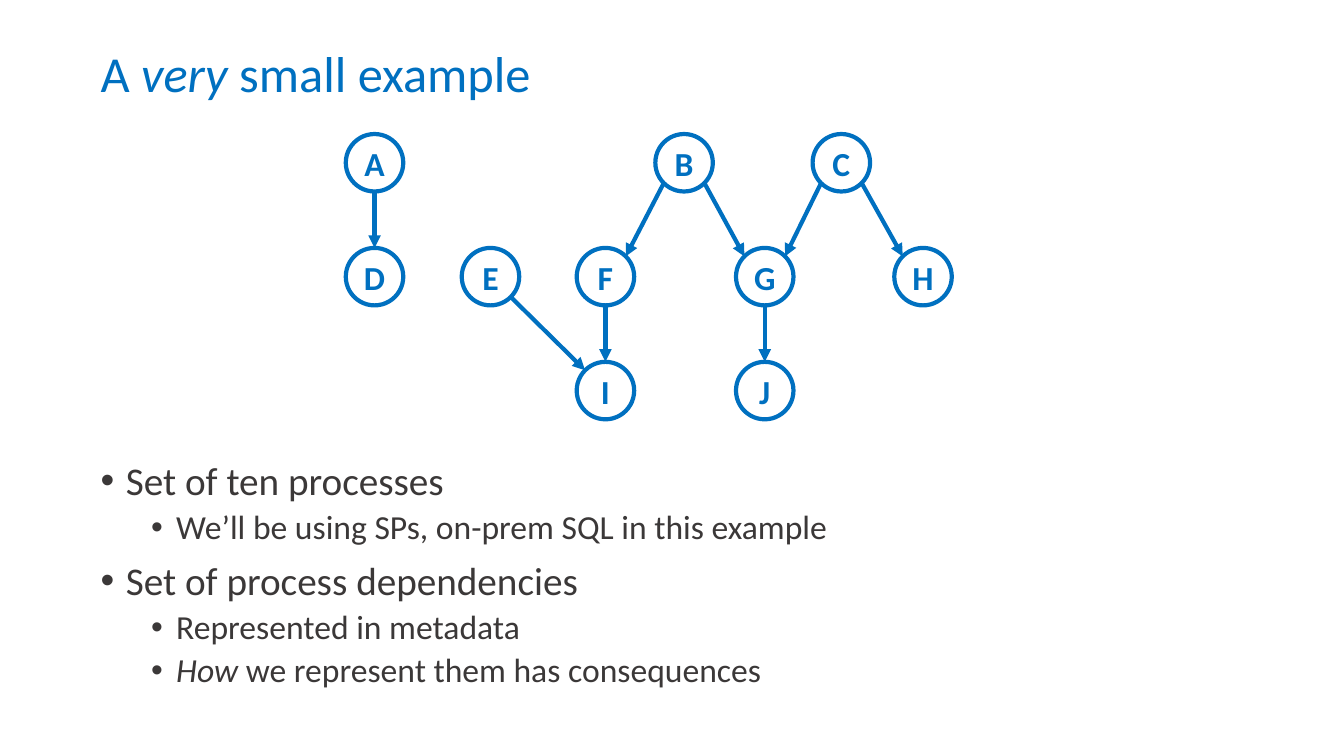
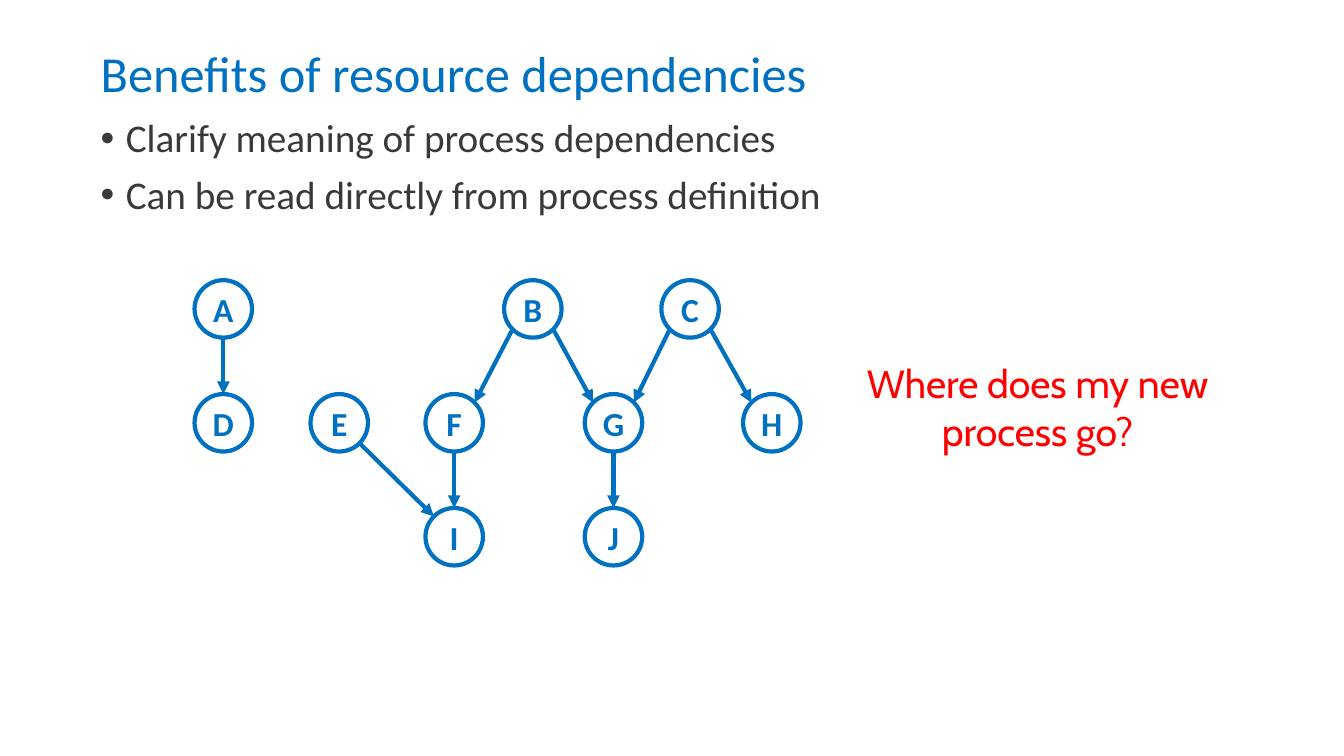
from dataclasses import dataclass

from lxml import etree
from pptx import Presentation
from pptx.dml.color import RGBColor
from pptx.enum.shapes import MSO_CONNECTOR, MSO_SHAPE
from pptx.enum.text import MSO_ANCHOR, PP_ALIGN
from pptx.oxml.ns import qn
from pptx.util import Inches, Pt

STRAIGHT = MSO_CONNECTOR.STRAIGHT
OVAL = MSO_SHAPE.OVAL
MIDDLE = MSO_ANCHOR.MIDDLE
CENTER = PP_ALIGN.CENTER

BLUE = "0070C0"
DARK = "3B3838"
RED = "FF0000"
BODY_FONT = "Calibri"
NOTE_FONT = "Cabin"

MARGIN = 0.9
NODE_SIZE = 0.57
ROW_PITCH = 1.13
DIAGONAL = 0.5 ** 0.5
LINE_WIDTH = 3


@dataclass(frozen=True)
class Node:
    label: str
    x: float
    row: int


@dataclass(frozen=True)
class Bullet:
    text: str
    level: int = 0


@dataclass(frozen=True)
class Level:
    size: int
    indent: float
    space_before: int


LEVELS = (Level(28, 0.25, 10), Level(24, 0.75, 5))

NODES = (
    Node("A", 0, 0), Node("B", 3.07, 0), Node("C", 4.63, 0),
    Node("D", 0, 1), Node("E", 1.15, 1), Node("F", 2.29, 1),
    Node("G", 3.87, 1), Node("H", 5.44, 1),
    Node("I", 2.29, 2), Node("J", 3.87, 2),
)
DEPENDENCIES = ("AD", "BF", "BG", "CG", "CH", "EI", "FI", "GJ")


def rgb(value: str) -> RGBColor:
    return RGBColor.from_string(value)


def style(r, size: float, color: str, font: str = BODY_FONT, bold: bool = False) -> None:
    r.font.size = Pt(size)
    r.font.name = font
    r.font.bold = bold
    r.font.color.rgb = rgb(color)


def write(p, text: str, size: float, color: str) -> None:
    for i, part in enumerate(text.split("*")):
        if part:
            r = p.add_run()
            r.text = part
            style(r, size, color)
            r.font.italic = i % 2 == 1


def add_box(s, x: float, y: float, w: float, h: float):
    sp = s.shapes.add_textbox(Inches(x), Inches(y), Inches(w), Inches(h))
    sp.text_frame.word_wrap = True
    return sp.text_frame


def add_title(s, text: str) -> None:
    tf = add_box(s, MARGIN, 0.35, 11.56, 0.62)
    tf.margin_top = Inches(0.14)
    tf.margin_bottom = 0
    p = tf.paragraphs[0]
    p.line_spacing = 0.9
    write(p, text, 36, BLUE)


def add_bullets(s, y: float, h: float, bullets: tuple[Bullet, ...]) -> None:
    tf = add_box(s, MARGIN, y, 11.56, h)
    for i, bullet in enumerate(bullets):
        p = tf.add_paragraph() if i else tf.paragraphs[0]
        level = LEVELS[bullet.level]
        p.level = bullet.level
        p.line_spacing = 0.9
        p.space_before = Pt(level.space_before)
        pPr = p._p.get_or_add_pPr()
        pPr.set("marL", str(Inches(level.indent)))
        pPr.set("indent", str(Inches(-0.25)))
        etree.SubElement(pPr, qn("a:buFont")).set("typeface", "Arial")
        etree.SubElement(pPr, qn("a:buChar")).set("char", "•")
        write(p, bullet.text, level.size, DARK)


def add_node(s, node: Node, x: float, y: float) -> None:
    sp = s.shapes.add_shape(
        OVAL, Inches(x + node.x), Inches(y + node.row * ROW_PITCH),
        Inches(NODE_SIZE), Inches(NODE_SIZE))
    sp.shadow.inherit = False
    sp.fill.background()
    sp.line.color.rgb = rgb(BLUE)
    sp.line.width = Pt(LINE_WIDTH)
    tf = sp.text_frame
    tf.margin_left = tf.margin_right = tf.margin_top = tf.margin_bottom = 0
    tf.word_wrap = False
    tf.vertical_anchor = MIDDLE
    tf.text = node.label
    p = tf.paragraphs[0]
    p.alignment = CENTER
    style(p.runs[0], 24, BLUE, bold=True)


def add_arrow(s, start: Node, end: Node, x: float, y: float) -> None:
    radius = NODE_SIZE / 2
    side = (end.x > start.x) - (end.x < start.x)
    dx = side * radius * DIAGONAL
    dy = radius * DIAGONAL if side else radius
    x, y = x + radius, y + radius
    line = s.shapes.add_connector(
        STRAIGHT,
        Inches(x + start.x + dx), Inches(y + start.row * ROW_PITCH + dy),
        Inches(x + end.x - dx), Inches(y + end.row * ROW_PITCH - dy))
    line.line.color.rgb = rgb(BLUE)
    line.line.width = Pt(LINE_WIDTH)
    etree.SubElement(line.line._get_or_add_ln(), qn("a:tailEnd")).set("type", "triangle")
    etree.SubElement(line._element.spPr, qn("a:effectLst"))


def add_graph(s, x: float, y: float) -> None:
    by_label = {node.label: node for node in NODES}
    for start, end in DEPENDENCIES:
        add_arrow(s, by_label[start], by_label[end], x, y)
    for node in NODES:
        add_node(s, node, x, y)


def add_question(s, text: str) -> None:
    tf = add_box(s, 8.28, 3.52, 4.02, 1.04)
    tf.text = text
    p = tf.paragraphs[0]
    p.alignment = CENTER
    style(p.runs[0], 28, RED, NOTE_FONT)


def add_slide(prs, title: str):
    s = prs.slides.add_slide(prs.slide_layouts[6])
    add_title(s, title)
    return s


def main() -> None:
    prs = Presentation()
    prs.slide_width = Inches(13.33)
    prs.slide_height = Inches(7.5)

    s = add_slide(prs, "A *very* small example")
    add_bullets(s, 4.53, 2.75, (
        Bullet("Set of ten processes"),
        Bullet("We’ll be using SPs, on-prem SQL in this example", 1),
        Bullet("Set of process dependencies"),
        Bullet("Represented in metadata", 1),
        Bullet("*How* we represent them has consequences", 1),
    ))
    add_graph(s, 3.43, 1.33)

    s = add_slide(prs, "Benefits of resource dependencies")
    add_bullets(s, 1.13, 1.2, (
        Bullet("Clarify meaning of process dependencies"),
        Bullet("Can be read directly from process definition"),
    ))
    add_graph(s, 1.93, 2.78)
    add_question(s, "Where does my new process go?")

    prs.save("out.pptx")


if __name__ == "__main__":
    main()
